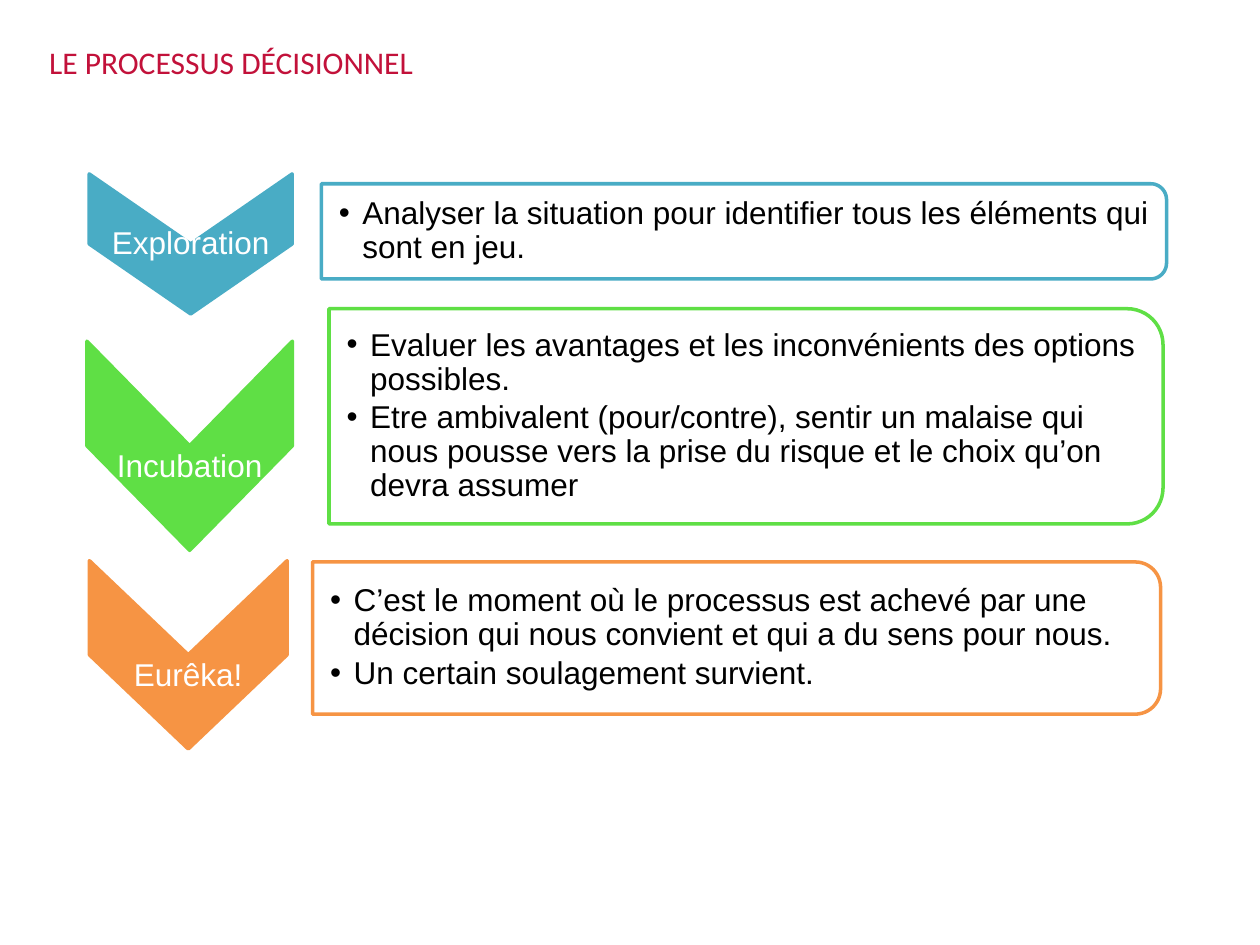
import math
from dataclasses import dataclass

from lxml import etree
from pptx import Presentation
from pptx.dml.color import RGBColor
from pptx.enum import text
from pptx.oxml import ns
from pptx.util import Pt


@dataclass(frozen=True)
class Theme:
    title: str = "C2113A"
    ink: str = "000000"
    paper: str = "FFFFFF"
    blue: str = "49ACC5"
    green: str = "5FDF45"
    orange: str = "F69444"
    heading_font: str = "Calibri"
    body_font: str = "Arial"
    size: float = 18
    outline: float = 2
    indent: float = 13.5


THEME = Theme()

# name, colour, chevron box, space above the name, panel box, panel padding, points
STAGES = [
    ("Exploration", THEME.blue, (51, 99.4, 116, 80), 0,
     (183.6, 105, 483, 54.4), 3.6,
     ["Analyser la situation pour identifier tous les éléments qui sont en jeu."]),
    ("Incubation", THEME.green, (49.7, 195, 117.4, 119.5), 25,
     (188, 176.4, 476.6, 123), 7.2,
     ["Evaluer les avantages et les inconvénients des options possibles.",
      "Etre ambivalent (pour/contre), sentir un malaise qui nous pousse vers "
      "la prise du risque et le choix qu’on devra assumer"]),
    ("Eurêka!", THEME.orange, (51.1, 320.4, 113, 107.6), 25,
     (178.6, 321.1, 484.6, 87), 5,
     ["C’est le moment où le processus est achevé par une décision qui nous "
      "convient et qui a du sens pour nous.",
      "Un certain soulagement survient."]),
]


def set_insets(frame, left, top, right, bottom):
    frame.margin_left, frame.margin_top = Pt(left), Pt(top)
    frame.margin_right, frame.margin_bottom = Pt(right), Pt(bottom)
    frame.word_wrap = True


def add_bullet(para):
    properties = para._p.get_or_add_pPr()
    properties.set("marL", str(Pt(THEME.indent)))
    properties.set("indent", str(-Pt(THEME.indent)))
    colour = etree.SubElement(properties, ns.qn("a:buClr"))
    etree.SubElement(colour, ns.qn("a:srgbClr"), val=THEME.ink)
    etree.SubElement(properties, ns.qn("a:buFont"), typeface=THEME.body_font)
    etree.SubElement(properties, ns.qn("a:buChar"), char="•")


def write(para, words, *, color=THEME.ink, font=THEME.body_font, bullet=False,
          align=text.PP_ALIGN.LEFT, spacing=None, before=0):
    if bullet:
        add_bullet(para)
    para.alignment = align
    para.line_spacing = spacing
    if before:
        para.space_before = Pt(before)
    span = para.add_run()
    span.text = words
    span.font.name = font
    span.font.size = Pt(THEME.size)
    span.font.color.rgb = RGBColor.from_string(color)


def add_outline(page, corners, fill, line):
    """Draw a closed polygon through corners given in points."""
    start, *rest = [(Pt(x), Pt(y)) for x, y in corners]
    builder = page.shapes.build_freeform(*start)
    builder.add_line_segments(rest, close=True)
    shape = builder.convert_to_shape()
    shape.shadow.inherit = False
    shape.fill.solid()
    shape.fill.fore_color.rgb = RGBColor.from_string(fill)
    shape.line.color.rgb = RGBColor.from_string(line)
    shape.line.width = Pt(THEME.outline)
    shape.text_frame.vertical_anchor = text.MSO_ANCHOR.MIDDLE
    return shape


def add_title(page, box, words):
    frame = page.shapes.add_textbox(*map(Pt, box)).text_frame
    set_insets(frame, 7.2, 3.6, 7.2, 3.6)
    write(frame.paragraphs[0], words, color=THEME.title, font=THEME.heading_font)


def add_chevron(page, box, name, color, drop):
    left, top, width, height = box
    right, center, middle = left + width, left + width / 2, top + height / 2
    shape = add_outline(page, [(right, top), (right, middle), (center, top + height),
                               (left, middle), (left, top), (center, middle)],
                        color, color)
    set_insets(shape.text_frame, 0.7, 0.7 + drop, 0.7, 0.7)
    write(shape.text_frame.paragraphs[0], name, color=THEME.paper,
          align=text.PP_ALIGN.CENTER, spacing=0.9)


def add_panel(page, box, color, padding, points):
    """Bulleted box with its two right corners rounded."""
    left, top, width, height = box
    right, bottom, radius = left + width, top + height, height / 6
    corners = [(left, bottom), (left, top)]
    for center_y, first in ((top + radius, -90), (bottom - radius, 0)):
        for step in range(13):
            angle = math.radians(first + step * 7.5)
            corners.append((right - radius + radius * math.cos(angle),
                            center_y + radius * math.sin(angle)))
    shape = add_outline(page, corners, THEME.paper, color)
    fill_color = shape._element.spPr.find(ns.qn("a:solidFill"))[0]
    etree.SubElement(fill_color, ns.qn("a:alpha"), val="90000")
    frame = shape.text_frame
    set_insets(frame, 10, padding, padding, padding)
    for index, words in enumerate(points):
        para = frame.add_paragraph() if index else frame.paragraphs[0]
        write(para, words, bullet=True, spacing=0.9, before=2.7 if index else 0)


def main():
    deck = Presentation()
    deck.slide_width, deck.slide_height = Pt(720), Pt(540)
    page = deck.slides.add_slide(deck.slide_layouts[6])
    add_title(page, (21, 21, 578, 51), "LE PROCESSUS DÉCISIONNEL")
    for name, color, chevron, drop, panel, padding, points in STAGES:
        add_chevron(page, chevron, name, color, drop)
        add_panel(page, panel, color, padding, points)
    deck.save("out.pptx")


if __name__ == "__main__":
    main()
